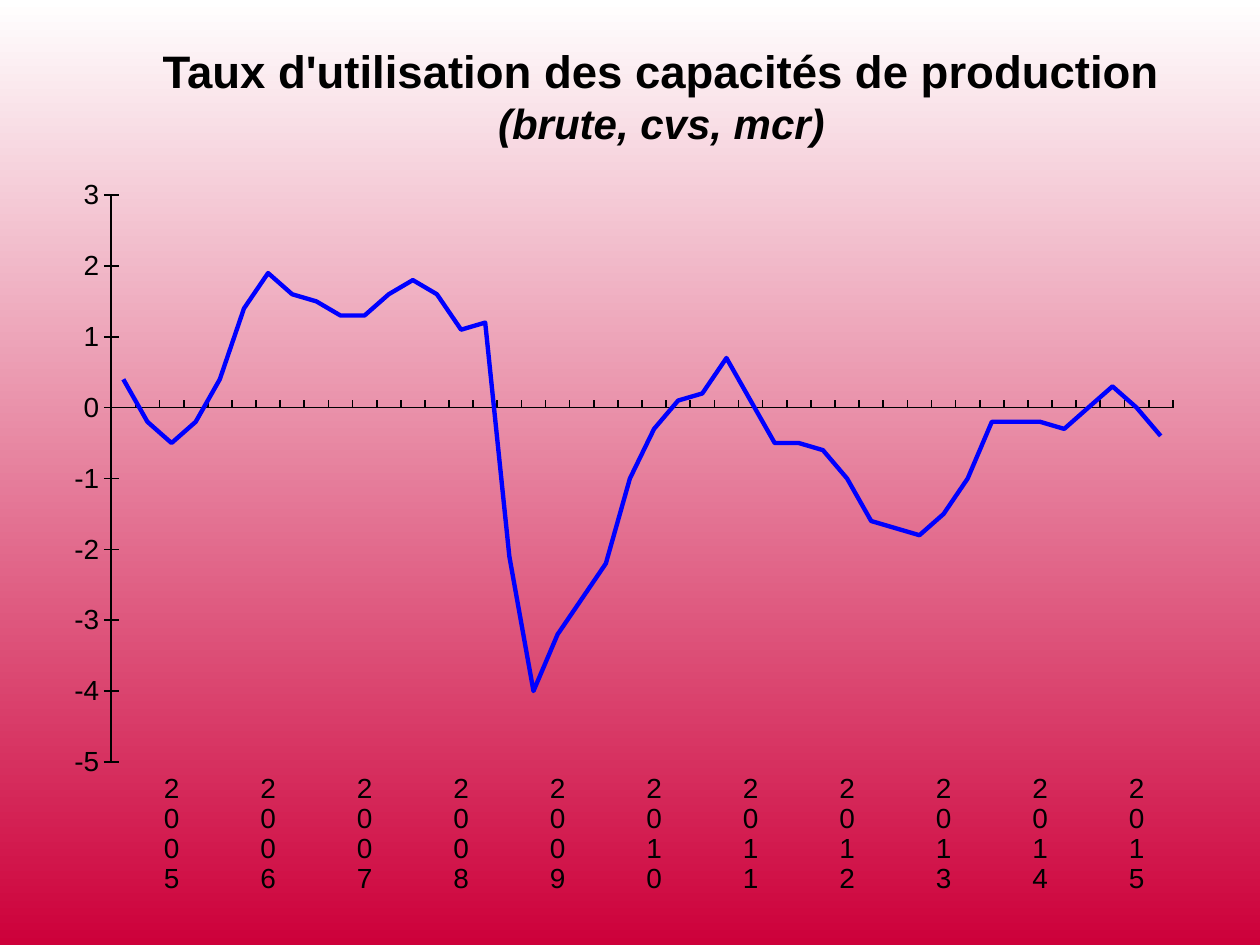
from dataclasses import dataclass

from lxml import etree
from pptx import Presentation
from pptx.chart.data import CategoryChartData
from pptx.dml.color import RGBColor
from pptx.enum.chart import XL_CHART_TYPE, XL_TICK_LABEL_POSITION, XL_TICK_MARK
from pptx.enum.text import MSO_ANCHOR, PP_ALIGN
from pptx.oxml.ns import qn
from pptx.util import Inches, Pt

LINE = XL_CHART_TYPE.LINE
LABELS_LOW = XL_TICK_LABEL_POSITION.LOW
TICK_INSIDE = XL_TICK_MARK.INSIDE
TICK_CROSS = XL_TICK_MARK.CROSS
TICK_NONE = XL_TICK_MARK.NONE
MIDDLE = MSO_ANCHOR.MIDDLE
CENTER = PP_ALIGN.CENTER

FONT = "Arial"
BLACK = "000000"
BLUE = "0000FF"
RATES = [
    0.4, -0.2, -0.5, -0.2, 0.4, 1.4, 1.9, 1.6, 1.5, 1.3, 1.3,
    1.6, 1.8, 1.6, 1.1, 1.2, -2.1, -4, -3.2, -2.7, -2.2, -1,
    -0.3, 0.1, 0.2, 0.7, 0.1, -0.5, -0.5, -0.6, -1, -1.6, -1.7,
    -1.8, -1.5, -1, -0.2, -0.2, -0.2, -0.3, 0, 0.3, 0, -0.4,
]
QUARTERS = [
    str(2005 + index // 4) if index % 4 == 2 else ""
    for index in range(len(RATES))
]


@dataclass
class TitlePart:
    text: str
    size: int
    italic: bool = False


TITLE = [
    TitlePart("Taux d'utilisation des capacités de production ", 26),
    TitlePart("(brute, cvs, mcr)", 24, True),
]


def color(value: str) -> RGBColor:
    return RGBColor.from_string(value)


def paint_background(slide, colors: list[str]) -> None:
    fill = slide.background.fill
    fill.gradient()
    fill.gradient_angle = 270
    for stop, value in zip(fill.gradient_stops, colors):
        stop.color.rgb = color(value)


def add_title(slide, parts: list[TitlePart]) -> None:
    frame = slide.shapes.add_textbox(
        Inches(0.75), Inches(0.13), Inches(9), Inches(1.25)
    ).text_frame
    frame.word_wrap = True
    frame.vertical_anchor = MIDDLE
    paragraph = frame.paragraphs[0]
    paragraph.alignment = CENTER
    for part in parts:
        run = paragraph.add_run()
        run.text = part.text
        run.font.name = FONT
        run.font.size = Pt(part.size)
        run.font.bold = True
        run.font.italic = part.italic
        run.font.color.rgb = color(BLACK)


def style_axis(axis, tick_mark) -> None:
    axis.has_major_gridlines = False
    axis.major_tick_mark = tick_mark
    axis.minor_tick_mark = TICK_NONE
    axis.format.line.color.rgb = color(BLACK)
    axis.format.line.width = Pt(1)
    font = axis.tick_labels.font
    font.name = FONT
    font.size = Pt(16)
    font.color.rgb = color(BLACK)


def place_plot(chart, x: float, y: float, w: float, h: float) -> None:
    plot_area = chart.plots[0]._element.getparent()
    for old in plot_area.findall(qn("c:layout")):
        plot_area.remove(old)
    layout = etree.Element(qn("c:layout"))
    plot_area.insert(0, layout)
    manual = etree.SubElement(layout, qn("c:manualLayout"))
    settings = {
        "layoutTarget": "inner", "xMode": "edge", "yMode": "edge",
        "x": x, "y": y, "w": w, "h": h,
    }
    for name, value in settings.items():
        etree.SubElement(manual, qn(f"c:{name}")).set("val", str(value))


def show_every_label(axis) -> None:
    body = axis._element.find(qn("c:txPr")).find(qn("a:bodyPr"))
    body.set("rot", "0")
    body.set("vert", "horz")
    last = axis._element.find(qn("c:noMultiLvlLbl"))
    for name in ("tickLblSkip", "tickMarkSkip"):
        skip = etree.Element(qn(f"c:{name}"))
        skip.set("val", "1")
        last.addprevious(skip)


def add_rate_chart(slide) -> None:
    data = CategoryChartData(number_format="0.0")
    data.categories = QUARTERS
    data.add_series("Series 1", RATES)
    chart = slide.shapes.add_chart(
        LINE, Inches(0.43), Inches(1.38), Inches(9.06), Inches(5.71), data
    ).chart
    chart.has_legend = False
    chart.has_title = False
    chart.font.name = FONT
    chart.font.size = Pt(16)
    chart.font.color.rgb = color(BLACK)
    chart.plots[0].vary_by_categories = False

    quarters = chart.category_axis
    style_axis(quarters, TICK_INSIDE)
    quarters.tick_label_position = LABELS_LOW
    show_every_label(quarters)

    rates = chart.value_axis
    style_axis(rates, TICK_CROSS)
    rates.minimum_scale = -5
    rates.maximum_scale = 3
    rates.major_unit = 1
    rates.tick_labels.number_format = "0"
    rates.tick_labels.number_format_is_linked = False

    curve = chart.plots[0].series[0]
    curve.smooth = False
    curve.format.line.color.rgb = color(BLUE)
    curve.format.line.width = Pt(2.5)
    place_plot(chart, 0.05, 0.03, 0.93, 0.8)


def main() -> None:
    deck = Presentation()
    deck.slide_width = Inches(10)
    deck.slide_height = Inches(7.5)
    slide = deck.slides.add_slide(deck.slide_layouts[6])
    paint_background(slide, ["FFFFFF", "CD003A"])
    add_title(slide, TITLE)
    add_rate_chart(slide)
    deck.save("out.pptx")


if __name__ == "__main__":
    main()
